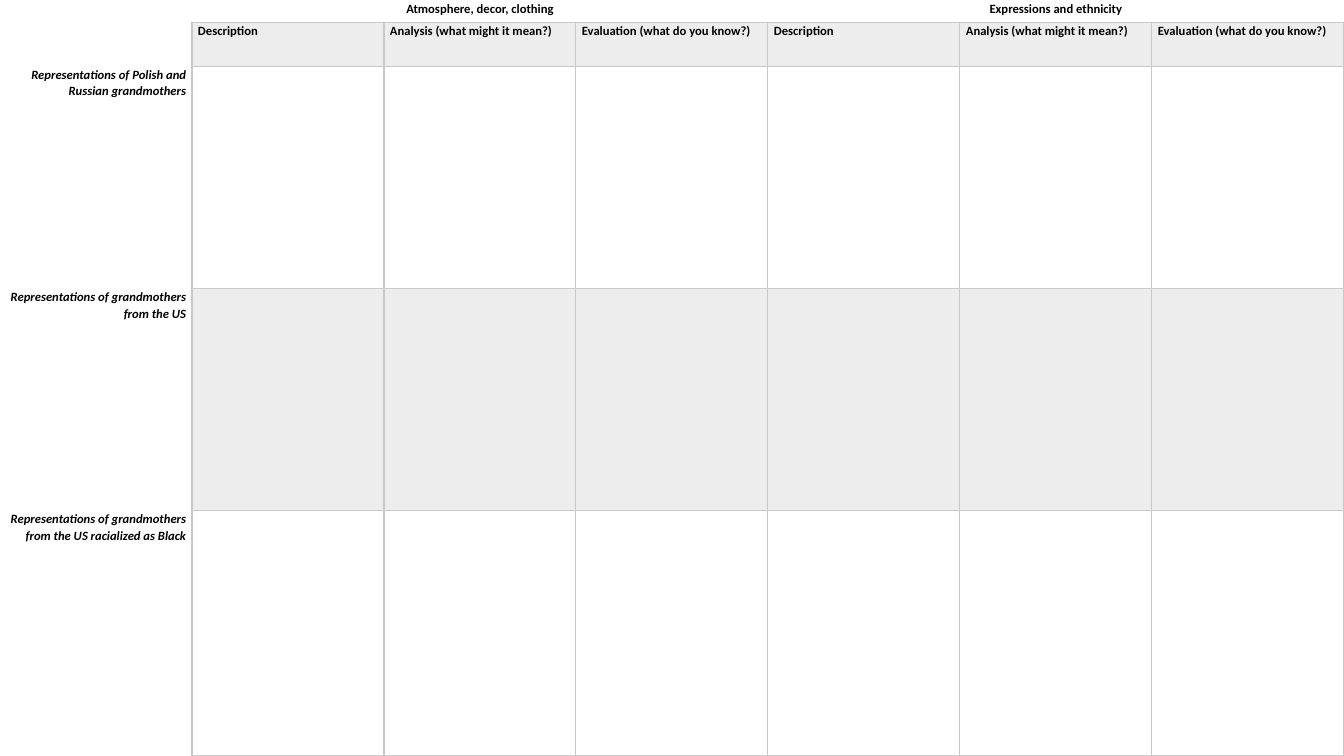
import lxml.etree
import pptx
import pptx.dml.color
import pptx.enum.text
import pptx.oxml.ns
import pptx.util

Inches = pptx.util.Inches
ALIGN = pptx.enum.text.PP_ALIGN
WIDTH, HEIGHT = 13.33, 7.5
LINE, BAND, WHITE = "C9C9C9", "EDEDED", "FFFFFF"
ROWS = [0.22, 0.44, 2.2, 2.2, 2.43]
COLS = 7
TOPICS = ["Atmosphere, decor, clothing", "Expressions and ethnicity"]
STEPS = ["Description", "Analysis (what might it mean?)", "Evaluation (what do you know?)"]
GROUPS = [
    "Representations of Polish and Russian grandmothers",
    "Representations of grandmothers from the US",
    "Representations of grandmothers from the US racialized as Black",
]
MARGINS = {
    "margin_left": Inches(0.06),
    "margin_right": Inches(0.06),
    "margin_top": 0,
    "margin_bottom": 0,
}


def apply(item, values):
    """Set each attribute of an item from a dict."""
    for name, value in values.items():
        setattr(item, name, value)


def color(code):
    """Turn a hex string into a colour."""
    return pptx.dml.color.RGBColor.from_string(code)


def add(parent, tag, **attrs):
    """Append a drawing element to its parent."""
    return lxml.etree.SubElement(parent, pptx.oxml.ns.qn(tag), **attrs)


def style(cell, fill, sides):
    """Give a cell its margins, its drawn sides and its fill."""
    apply(cell, MARGINS)
    props = cell._tc.get_or_add_tcPr()
    for side in "LRTB":
        line = add(props, f"a:ln{side}", w=str(pptx.util.Pt(1)))
        if side in sides:
            add(add(line, "a:solidFill"), "a:srgbClr", val=LINE)
        else:
            add(line, "a:noFill")
    cell.fill.solid()
    cell.fill.fore_color.rgb = color(fill)


def write(cell, text, align, italic=False):
    """Write one bold paragraph in a cell."""
    para = cell.text_frame.paragraphs[0]
    apply(para, {"alignment": align, "line_spacing": 1.07})
    if not text:
        add(para._p, "a:endParaRPr", sz="900")
        return
    run = para.add_run()
    run.text = text
    apply(run.font, {"name": "Calibri", "size": pptx.util.Pt(9), "bold": True, "italic": italic})
    run.font.color.rgb = color("000000")


def look(row, col):
    """Return the fill and the drawn sides for a place in the grid."""
    if row == 0:
        return WHITE, "B" if col else ""
    if col == 0:
        return WHITE, "R"
    return BAND if row % 2 else WHITE, "LRTB"


def words(row, col):
    """Return the text, alignment and slant for a place in the grid."""
    step = (col - 1) % len(STEPS)
    if row == 0 and col and step == 0:
        return TOPICS[col // len(STEPS)], ALIGN.CENTER, False
    if row == 1 and col:
        return STEPS[step], ALIGN.LEFT, False
    if row > 1 and col == 0:
        return GROUPS[row - 2], ALIGN.RIGHT, True
    return "", ALIGN.LEFT, False


def draw_grid(slide, left, top, width, height):
    """Place the worksheet table in the given box."""
    box = [Inches(size) for size in (left, top, width, height)]
    table = slide.shapes.add_table(len(ROWS), COLS, *box).table
    apply(table, {"first_row": False, "horz_banding": False})
    for col in table.columns:
        col.width = Inches(width / COLS)
    for row, size in zip(table.rows, ROWS):
        row.height = Inches(size * height / sum(ROWS))
    for row in range(len(ROWS)):
        for col in range(COLS):
            cell = table.cell(row, col)
            style(cell, *look(row, col))
            write(cell, *words(row, col))
    table.cell(0, 0).merge(table.cell(1, 0))
    for col in range(1, COLS, len(STEPS)):
        table.cell(0, col).merge(table.cell(0, col + len(STEPS) - 1))


def main():
    """Build and save the slide."""
    deck = pptx.Presentation()
    apply(deck, {"slide_width": Inches(WIDTH), "slide_height": Inches(HEIGHT)})
    slide = deck.slides.add_slide(deck.slide_layouts[6])
    draw_grid(slide, 0, 0, WIDTH, HEIGHT)
    deck.save("out.pptx")


if __name__ == "__main__":
    main()
